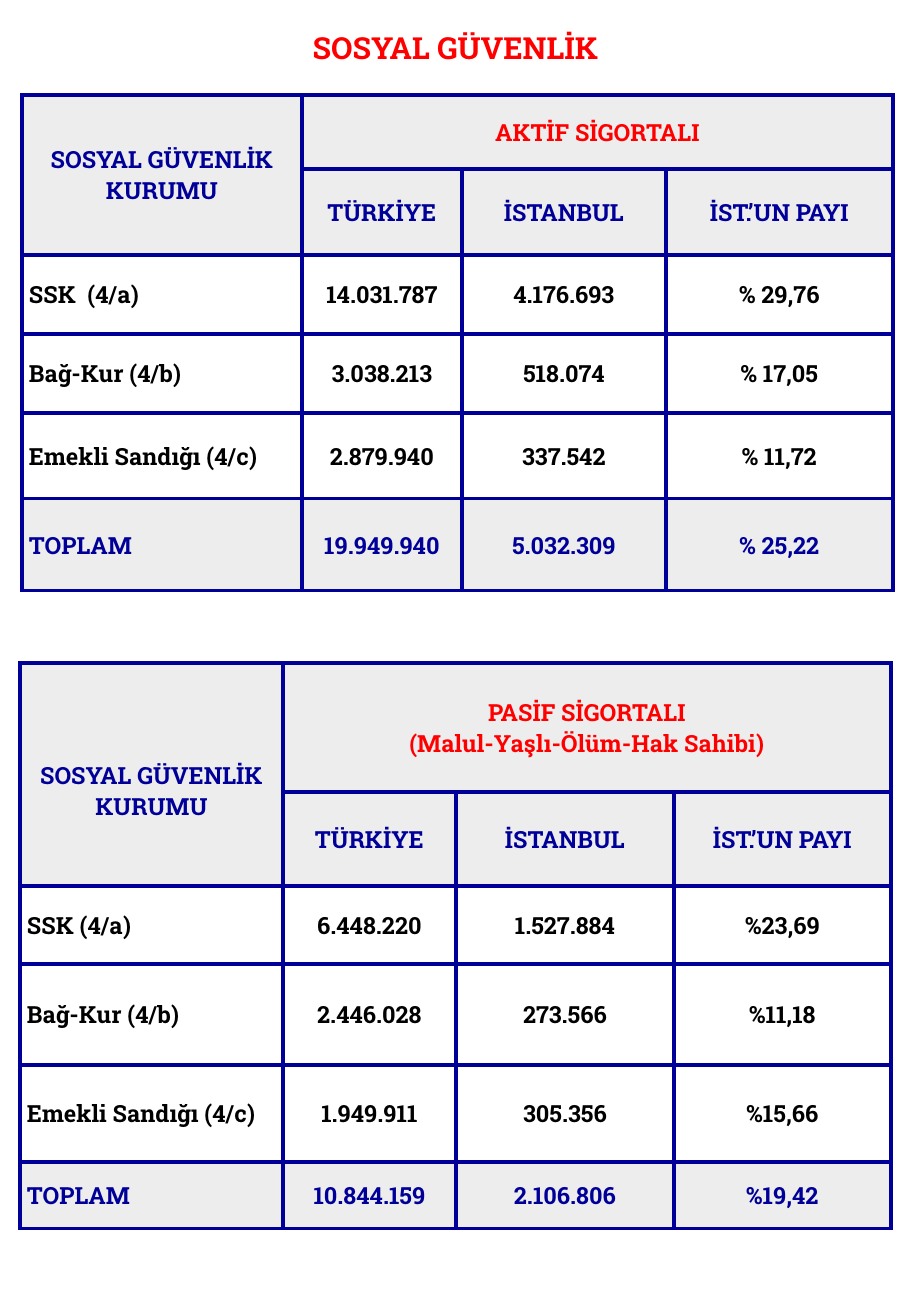
from dataclasses import dataclass

from lxml import etree
from pptx import Presentation
from pptx.dml.color import RGBColor
from pptx.enum.text import MSO_ANCHOR, PP_ALIGN
from pptx.oxml.ns import qn
from pptx.slide import Slide
from pptx.table import _Cell
from pptx.text.text import _Paragraph
from pptx.util import Emu, Pt

CENTER, LEFT = PP_ALIGN.CENTER, PP_ALIGN.LEFT
MIDDLE, TOP = MSO_ANCHOR.MIDDLE, MSO_ANCHOR.TOP
EMU_PER_PX = 914400 / 121.5
SLIDE_WIDTH, SLIDE_HEIGHT = 911, 1316
CELL_INSET = 7
BORDER_SIDES = ("a:lnL", "a:lnR", "a:lnT", "a:lnB")


@dataclass(frozen=True)
class Theme:
    font: str = "Roboto Slab"
    title_size: int = 18
    table_size: int = 14
    border_width: float = 2.25
    red: str = "FF0000"
    navy: str = "000099"
    black: str = "000000"
    shaded: str = "EDEDED"
    plain: str = "FFFFFF"


@dataclass(frozen=True)
class InsuredTable:
    left: int
    top: int
    columns: tuple[int, ...]
    rows: tuple[int, ...]
    heading: str
    body: tuple[tuple[str, ...], ...]
    corner_top_inset: int = 0


THEME = Theme()
CORNER = "SOSYAL GÜVENLİK KURUMU"
COLUMN_HEADS = ("TÜRKİYE", "İSTANBUL", "İST.’UN PAYI")
TABLES = (
    InsuredTable(
        22, 95, (280, 160, 204, 227), (74, 86, 79, 79, 86, 92),
        "AKTİF SİGORTALI",
        (
            ("SSK  (4/a)", "14.031.787", "4.176.693", "% 29,76"),
            ("Bağ-Kur (4/b)", "3.038.213", "518.074", "% 17,05"),
            ("Emekli Sandığı (4/c)", "2.879.940", "337.542", "% 11,72"),
            ("TOPLAM", "19.949.940", "5.032.309", "% 25,22"),
        ),
    ),
    InsuredTable(
        20, 663, (263, 173, 218, 217), (129, 94, 78, 101, 97, 67),
        "PASİF SİGORTALI\n(Malul-Yaşlı-Ölüm-Hak Sahibi)",
        (
            ("SSK (4/a)", "6.448.220", "1.527.884", "%23,69"),
            ("Bağ-Kur (4/b)", "2.446.028", "273.566", "%11,18"),
            ("Emekli Sandığı (4/c)", "1.949.911", "305.356", "%15,66"),
            ("TOPLAM", "10.844.159", "2.106.806", "%19,42"),
        ),
        corner_top_inset=32,
    ),
)


def px(length: int) -> Emu:
    return Emu(round(length * EMU_PER_PX))


def style_paragraph(paragraph: _Paragraph, size: int, color: str, alignment: PP_ALIGN) -> None:
    paragraph.alignment = alignment
    font = paragraph.font
    font.name, font.size, font.bold = THEME.font, Pt(size), True
    font.color.rgb = RGBColor.from_string(color)


def style_cell(cell: _Cell, fill: str) -> None:
    """Set the fill, the four borders and the insets of a cell."""
    cell.fill.solid()
    cell.fill.fore_color.rgb = RGBColor.from_string(fill)
    properties = cell._tc.get_or_add_tcPr()
    for index, side in enumerate(BORDER_SIDES):
        line = etree.Element(qn(side), w=str(Pt(THEME.border_width)))
        solid = etree.SubElement(line, qn("a:solidFill"))
        etree.SubElement(solid, qn("a:srgbClr"), val=THEME.navy)
        properties.insert(index, line)
    cell.vertical_anchor = MIDDLE
    cell.margin_left = cell.margin_right = px(CELL_INSET)
    cell.margin_top = cell.margin_bottom = 0


def write_cell(cell: _Cell, text: str, color: str, alignment: PP_ALIGN = CENTER) -> None:
    cell.text = text
    for paragraph in cell.text_frame.paragraphs:
        style_paragraph(paragraph, THEME.table_size, color, alignment)


def add_title(slide: Slide, text: str) -> None:
    box = slide.shapes.add_textbox(0, px(27), px(SLIDE_WIDTH), px(74))
    frame = box.text_frame
    frame.word_wrap = True
    frame.vertical_anchor = TOP
    frame.text = text
    paragraph = frame.paragraphs[0]
    paragraph.line_spacing = 0.9
    style_paragraph(paragraph, THEME.title_size, THEME.red, CENTER)


def add_insured_table(slide: Slide, data: InsuredTable) -> None:
    row_count, column_count = len(data.rows), len(data.columns)
    table = slide.shapes.add_table(
        row_count, column_count, px(data.left), px(data.top),
        px(sum(data.columns)), px(sum(data.rows)),
    ).table
    table.first_row = table.horz_banding = False
    for column, width in zip(table.columns, data.columns):
        column.width = px(width)
    for row, height in zip(table.rows, data.rows):
        row.height = px(height)

    shaded_rows = (0, 1, row_count - 1)
    for row_index, row in enumerate(table.rows):
        for cell in row.cells:
            style_cell(cell, THEME.shaded if row_index in shaded_rows else THEME.plain)

    corner, heading = table.cell(0, 0), table.cell(0, 1)
    corner.merge(table.cell(1, 0))
    heading.merge(table.cell(0, column_count - 1))
    corner.margin_top = px(data.corner_top_inset)
    write_cell(corner, CORNER, THEME.navy)
    write_cell(heading, data.heading, THEME.red)
    for column_index, text in enumerate(COLUMN_HEADS, start=1):
        write_cell(table.cell(1, column_index), text, THEME.navy)

    for row_index, values in enumerate(data.body, start=2):
        color = THEME.navy if row_index in shaded_rows else THEME.black
        for column_index, text in enumerate(values):
            alignment = CENTER if column_index else LEFT
            write_cell(table.cell(row_index, column_index), text, color, alignment)


def main() -> None:
    presentation = Presentation()
    presentation.slide_width = px(SLIDE_WIDTH)
    presentation.slide_height = px(SLIDE_HEIGHT)
    slide = presentation.slides.add_slide(presentation.slide_layouts[6])
    add_title(slide, "SOSYAL GÜVENLİK")
    for data in TABLES:
        add_insured_table(slide, data)
    presentation.save("out.pptx")


if __name__ == "__main__":
    main()
